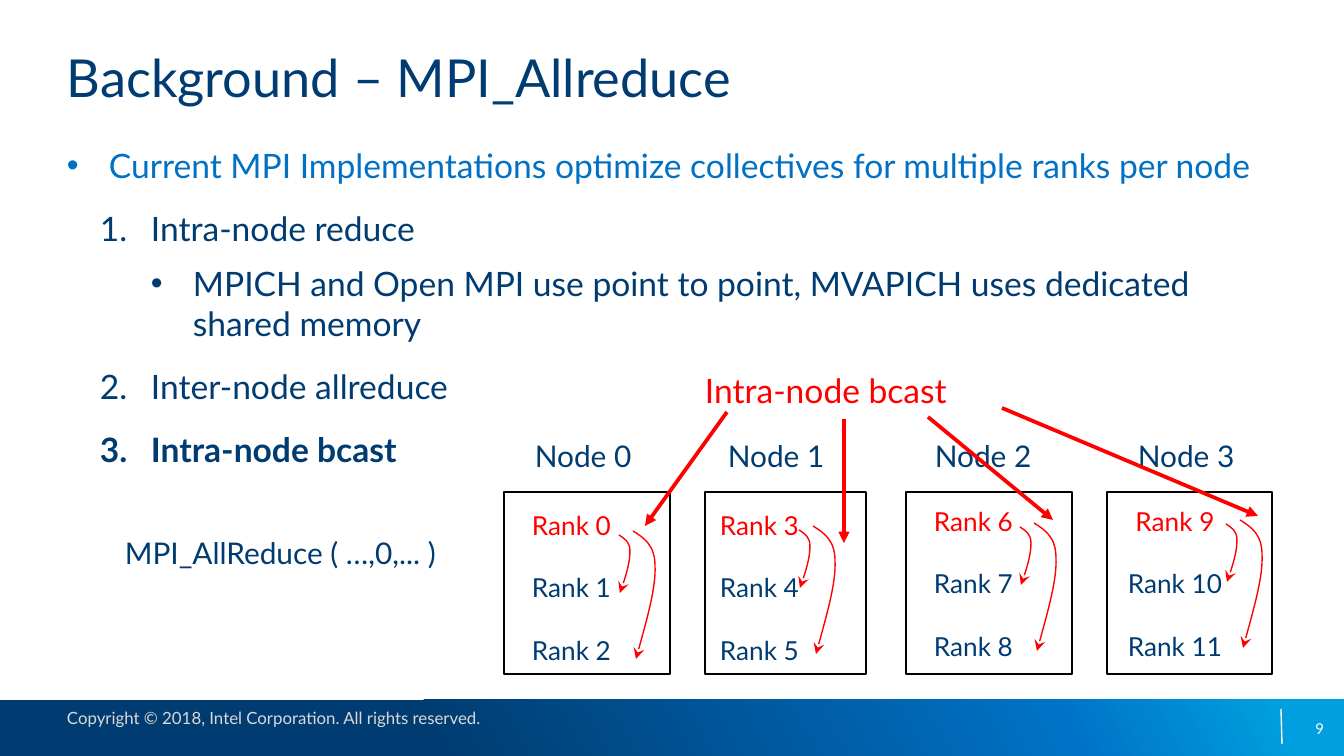
"""Builds the MPI_Allreduce background slide with its intra-node broadcast diagram."""
import pptx
import pptx.dml.color
import pptx.enum.shapes
import pptx.enum.text
import pptx.oxml
import pptx.oxml.ns
import pptx.util

SCALE = 914400 * 10 / 1344
FONT = "Lato"
COLORS = {"navy": "003C71", "blue": "0071C5", "cyan": "009FDF", "red": "FF0000",
          "black": "000000", "white": "FFFFFF", "grey": "D9D9D9"}

LABELS = [
    ("Copyright © 2018, Intel Corporation. All rights reserved.", (67, 708, 433, 20), 9, "grey"),
    ("Background – MPI_Allreduce", (67, 45, 1210, 128), 28, "navy"),
    ("MPI_AllReduce ( …,0,... )", (125, 535, 322, 36), 16, "navy"),
    ("Intra-node bcast", (705, 370, 254, 40), 18, "red"),
]
PAGE_NUMBER = "9"
OUTLINE = [
    ("bullet", "Current MPI Implementations optimize collectives for multiple ranks per node", "blue", False),
    ("number", "Intra-node reduce", "navy", False),
    ("detail", "MPICH and Open MPI use point to point, MVAPICH uses dedicated shared memory", "navy", False),
    ("number", "Inter-node allreduce", "navy", False),
    ("number", "Intra-node bcast", "navy", True),
]
DOT = ('buFont typeface="Arial"', 'buChar char="•"')
OUTLINE_STYLES = {
    "bullet": dict(level=0, margin=42, hang=42, before=12, marks=DOT),
    "number": dict(level=1, margin=84, hang=51, before=12, marks=('buAutoNum type="arabicPeriod"',)),
    "detail": dict(level=2, margin=126, hang=42, before=8, marks=DOT),
}
NODES = [
    dict(width=166, label=535, ranks=(527, 509, 89), sender=(619, 535), arrow=(727, 412, 645, 526)),
    dict(width=161, label=728, ranks=(715, 509, 89), sender=(799, 530), arrow=(844, 419, 844, 543)),
    dict(width=166, label=935, ranks=(929, 505, 89), sender=(1020, 527), arrow=(928, 417, 1053, 520)),
    dict(width=165, label=1138, ranks=(1121, 505, 108), sender=(1226, 524), arrow=(1002, 408, 1258, 516)),
]
RANKS_PER_NODE = 3
NODE_LEFT, NODE_PITCH, NODE_TOP, NODE_HEIGHT = 504, 201, 492, 182
NEAR_CURVE = [(1, 58), (7, 42), (11, 26), (11, 16), (11, 7), (6, 4), (0, 0)]
FAR_CURVE = [(17, 124), (27, 88), (37, 52), (36, 31), (36, 10), (25, 3), (14, -4)]


def px(length):
    return pptx.util.Emu(round(length * SCALE))


def rgb(color):
    return pptx.dml.color.RGBColor.from_string(COLORS[color])


def element(markup):
    return pptx.oxml.parse_xml(f"<a:{markup} {pptx.oxml.ns.nsdecls('a')}/>")


def add_frame(shapes, box, wrap=True):
    frame = shapes.add_textbox(*map(px, box)).text_frame
    frame.margin_left = frame.margin_right = frame.margin_top = frame.margin_bottom = 0
    frame.word_wrap = wrap
    return frame


def add_run(paragraph, text, size, color, bold=False):
    run = paragraph.add_run()
    run.text = text
    run.font.name = FONT
    run.font.size = pptx.util.Pt(size)
    run.font.bold = bold
    run.font.color.rgb = rgb(color)


def next_paragraph(frame, index):
    return frame.add_paragraph() if index else frame.paragraphs[0]


def set_line(shape, color, width, end=None):
    shape.line.color.rgb = rgb(color)
    shape.line.width = pptx.util.Pt(width)
    if end:
        shape.line._get_or_add_ln().append(element(end))


def add_line(shapes, ends, color, width, end=None):
    line = shapes.add_connector(pptx.enum.shapes.MSO_CONNECTOR.STRAIGHT, *map(px, ends))
    set_line(line, color, width, end)
    line._element.spPr.append(element("effectLst"))


def add_rectangle(shapes, box):
    rectangle = shapes.add_shape(pptx.enum.shapes.MSO_SHAPE.RECTANGLE, *map(px, box))
    rectangle.shadow.inherit = False
    return rectangle


def add_curve(shapes, origin, controls):
    corners = [(px(origin[0] + x), px(origin[1] + y)) for x, y in controls]
    builder = shapes.build_freeform(*corners[0])
    builder.add_line_segments(corners[1:], close=False)
    curve = builder.convert_to_shape()
    segments = curve._element.findall(".//" + pptx.oxml.ns.qn("a:lnTo"))
    outline = segments[0].getparent()
    for first in range(0, len(segments), 3):
        bend = element("cubicBezTo")
        for segment in segments[first:first + 3]:
            bend.append(segment[0])
            outline.remove(segment)
        outline.append(bend)
    curve.shadow.inherit = False
    curve.fill.background()
    set_line(curve, "red", 0.75, 'headEnd type="stealth"')


def add_footer(shapes):
    band = add_rectangle(shapes, (0, 700, 1344, 56))
    band.line.fill.background()
    band.fill.gradient()
    band.fill.gradient_angle = 29
    stops = band._element.spPr.find(".//" + pptx.oxml.ns.qn("a:gsLst"))
    for stop in list(stops):
        stops.remove(stop)
    for position, color in ((32, "navy"), (78, "blue"), (95, "cyan")):
        stop = element(f'gs pos="{position * 1000}"')
        stop.append(element(f'srgbClr val="{COLORS[color]}"'))
        stops.append(stop)
    add_line(shapes, (1281, 709, 1282, 744), "white", 0.75)
    frame = add_frame(shapes, (1282, 708, 42, 41))
    frame.vertical_anchor = pptx.enum.text.MSO_ANCHOR.MIDDLE
    frame.paragraphs[0].alignment = pptx.enum.text.PP_ALIGN.RIGHT
    add_run(frame.paragraphs[0], PAGE_NUMBER, 8, "white")


def add_outline(shapes):
    frame = add_frame(shapes, (67, 145, 1210, 504))
    for index, (kind, text, color, bold) in enumerate(OUTLINE):
        style = OUTLINE_STYLES[kind]
        paragraph = next_paragraph(frame, index)
        paragraph.level = style["level"]
        properties = paragraph._p.get_or_add_pPr()
        properties.set("marL", str(px(style["margin"])))
        properties.set("indent", str(-px(style["hang"])))
        for mark in style["marks"]:
            properties.append(element(mark))
        if index:
            paragraph.space_before = pptx.util.Pt(style["before"])
        add_run(paragraph, text, 18, color, bold)


def add_node(shapes, number, node):
    box = add_rectangle(shapes, (NODE_LEFT + number * NODE_PITCH, NODE_TOP, node["width"], NODE_HEIGHT))
    box.fill.background()
    set_line(box, "black", 0.75)
    label = add_frame(shapes, (node["label"], 438, 98, 36), wrap=False)
    add_run(label.paragraphs[0], f"Node {number}", 16, "navy")
    ranks = add_frame(shapes, (*node["ranks"], 190))
    for index in range(RANKS_PER_NODE):
        paragraph = next_paragraph(ranks, index)
        paragraph.alignment = pptx.enum.text.PP_ALIGN.CENTER
        if index:
            paragraph.space_before = pptx.util.Pt(16.8)
        add_run(paragraph, f"Rank {number * RANKS_PER_NODE + index}", 14, "navy" if index else "red")
    for controls in (NEAR_CURVE, FAR_CURVE):
        add_curve(shapes, node["sender"], controls)


def main():
    deck = pptx.Presentation()
    deck.slide_width, deck.slide_height = px(1344), px(756)
    shapes = deck.slides.add_slide(deck.slide_layouts[6]).shapes
    add_footer(shapes)
    add_outline(shapes)
    for number, node in enumerate(NODES):
        add_node(shapes, number, node)
    for text, box, size, color in LABELS:
        add_run(add_frame(shapes, box, wrap=False).paragraphs[0], text, size, color)
    for node in NODES:
        add_line(shapes, node["arrow"], "red", 2, 'tailEnd type="triangle"')
    deck.save("out.pptx")


if __name__ == "__main__":
    main()
